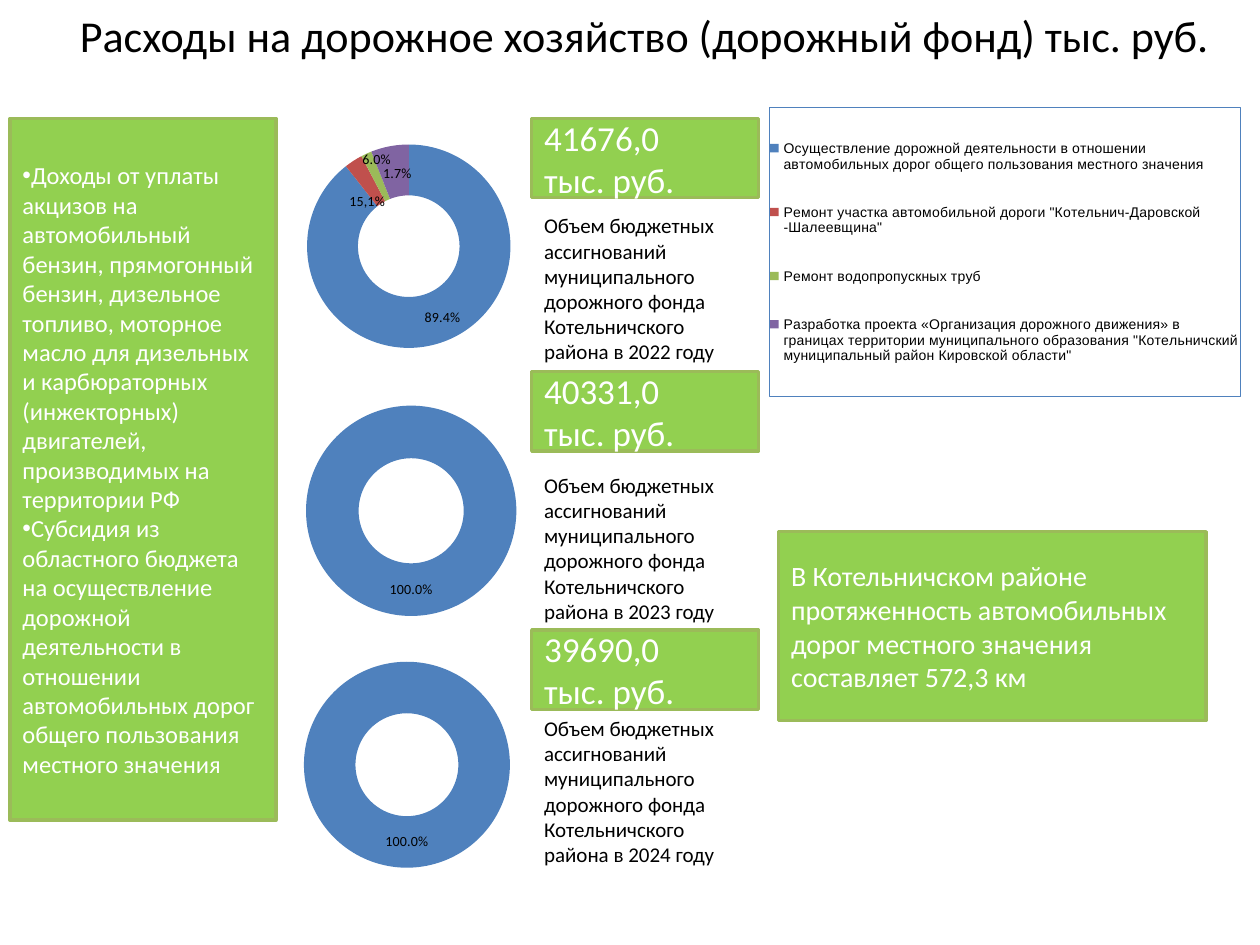
from lxml.etree import SubElement
from pptx import Presentation
from pptx.chart.data import CategoryChartData
from pptx.dml.color import RGBColor
from pptx.enum.chart import XL_CHART_TYPE, XL_LEGEND_POSITION
from pptx.enum.shapes import MSO_SHAPE
from pptx.enum.text import MSO_ANCHOR, PP_ALIGN
from pptx.oxml import parse_xml
from pptx.oxml.ns import nsdecls, qn
from pptx.util import Inches, Pt

BLACK = RGBColor(0x00, 0x00, 0x00)
WHITE = RGBColor(0xFF, 0xFF, 0xFF)
LIME = RGBColor(0x92, 0xD0, 0x50)
OLIVE = RGBColor(0x9B, 0xBB, 0x59)
BLUE = RGBColor(0x4F, 0x81, 0xBD)
RED = RGBColor(0xC0, 0x50, 0x4D)
PURPLE = RGBColor(0x80, 0x64, 0xA2)
SLICE_COLORS = (BLUE, RED, OLIVE, PURPLE)

RING_AREA = (0.14, 0.13, 0.69, 0.74)
LABEL_SHIFTS = ((0.03, 0), (0, 0.07), (0.07, -0.01), (-0.06, -0.04))

TITLE = "Расходы на дорожное хозяйство (дорожный фонд) тыс. руб."
INCOME = (
    "Доходы от уплаты акцизов на автомобильный бензин, прямогонный бензин, "
    "дизельное топливо, моторное масло для дизельных и карбюраторных "
    "(инжекторных) двигателей, производимых на территории РФ",
    "Субсидия из областного бюджета на осуществление дорожной деятельности "
    "в отношении автомобильных дорог общего пользования местного значения",
)
ROAD_LENGTH = ("В Котельничском районе протяженность автомобильных дорог "
               "местного значения составляет 572,3 км")
EXPENSES = (
    "Осуществление дорожной деятельности в отношении автомобильных дорог "
    "общего пользования местного значения",
    'Ремонт участка автомобильной дороги "Котельнич-Даровской -Шалеевщина"',
    "Ремонт водопропускных труб",
    "Разработка проекта «Организация дорожного движения» в границах "
    'территории муниципального образования "Котельничский муниципальный '
    'район Кировской области"',
)
# year, amount, top of the amount box, top of the caption
YEARS = (
    (2022, "41676,0", 0.94, 1.64),
    (2023, "40331,0", 2.95, 3.7),
    (2024, "39690,0", 5, 5.63),
)


def manual_layout(area, inner=False):
    """Return a c:layout element for x, y and, if given, width and height."""
    target = '<c:layoutTarget val="inner"/>' if inner else ""
    modes = '<c:xMode val="edge"/><c:yMode val="edge"/>' if len(area) == 4 else ""
    sizes = "".join(f'<c:{name} val="{value}"/>' for name, value in zip("xywh", area))
    return parse_xml(f'<c:layout {nsdecls("c")}><c:manualLayout>{target}{modes}{sizes}'
                     "</c:manualLayout></c:layout>")


class SlideBuilder:
    def __init__(self, page, font="Calibri"):
        self.page = page
        self.font = font

    def add_lines(self, frame, lines, size, color, align=PP_ALIGN.LEFT, bullet=None):
        frame.word_wrap = True
        for number, line in enumerate(lines):
            para = frame.add_paragraph() if number else frame.paragraphs[0]
            para.alignment = align
            if bullet:
                properties = para._p.get_or_add_pPr()
                SubElement(properties, qn("a:buFont"), typeface="Arial")
                SubElement(properties, qn("a:buChar"), char=bullet)
            span = para.add_run()
            span.text = line
            span.font.size = Pt(size)
            span.font.name = self.font
            span.font.color.rgb = color

    def text(self, left, top, width, height, lines, size,
             align=PP_ALIGN.LEFT, anchor=MSO_ANCHOR.TOP):
        box = self.page.shapes.add_textbox(
            Inches(left), Inches(top), Inches(width), Inches(height))
        box.text_frame.vertical_anchor = anchor
        self.add_lines(box.text_frame, lines, size, BLACK, align)

    def panel(self, left, top, width, height, lines, size, bullet=None):
        box = self.page.shapes.add_shape(
            MSO_SHAPE.RECTANGLE, Inches(left), Inches(top), Inches(width), Inches(height))
        box.shadow.inherit = False
        box.fill.solid()
        box.fill.fore_color.rgb = LIME
        box.line.color.rgb = OLIVE
        box.line.width = Pt(2)
        box.text_frame.vertical_anchor = MSO_ANCHOR.MIDDLE
        self.add_lines(box.text_frame, lines, size, WHITE, bullet=bullet)

    def ring(self, left, top, width, height, categories, values, area=RING_AREA):
        data = CategoryChartData(number_format="0.0%")
        data.categories = categories
        data.add_series("Series 1", values)
        chart = self.page.shapes.add_chart(
            XL_CHART_TYPE.DOUGHNUT, Inches(left), Inches(top),
            Inches(width), Inches(height), data).chart
        chart.has_title = False
        chart.has_legend = False
        chart.font.size = Pt(18)
        chart.font.name = self.font
        chart.font.color.rgb = BLACK
        plot_area = chart._chartSpace.chart.plotArea
        for layout in plot_area.findall(qn("c:layout")):
            plot_area.remove(layout)
        plot_area.insert(0, manual_layout(area, inner=True))
        chart._chartSpace.chart.addnext(parse_xml(
            f'<c:spPr {nsdecls("c", "a")}><a:noFill/><a:ln><a:noFill/></a:ln></c:spPr>'))
        series = chart.plots[0].series[0]
        for index, color in zip(range(len(values)), SLICE_COLORS):
            fill = series.points[index].format.fill
            fill.solid()
            fill.fore_color.rgb = color
        return chart

    def style_labels(self, font):
        font.size = Pt(8)
        font.name = self.font
        font.color.rgb = BLACK

    def label(self, chart):
        labels = chart.plots[0].series[0].data_labels
        labels.show_value = True
        labels.number_format = "0.0%"
        labels.number_format_is_linked = False
        self.style_labels(labels.font)

    def shift_labels(self, chart, shifts, custom):
        """Move each point's label; custom maps a point to its own wording."""
        series = chart.plots[0].series[0]
        for index, shift in enumerate(shifts):
            label = series.points[index].data_label
            if index in custom:
                span = label.text_frame.paragraphs[0].add_run()
                span.text = custom[index]
                self.style_labels(span.font)
            else:
                self.style_labels(label.font)
            mark = series._element.xpath(f"c:dLbls/c:dLbl/c:idx[@val='{index}']")[0]
            mark.addnext(manual_layout(shift))

    def legend(self, chart):
        """Let a bordered legend fill the whole chart frame."""
        chart.has_legend = True
        legend = chart.legend
        legend.position = XL_LEGEND_POSITION.TOP
        legend.include_in_layout = True
        legend.font.size = Pt(8)
        legend.font.name = "Arial"
        element = legend._element
        for layout in element.findall(qn("c:layout")):
            element.remove(layout)
        element.find(qn("c:legendPos")).addnext(manual_layout((0, 0, 1, 1)))
        element.find(qn("c:overlay")).addnext(parse_xml(
            f'<c:spPr {nsdecls("c", "a")}><a:ln w="9525"><a:solidFill>'
            f'<a:srgbClr val="{BLUE}"/></a:solidFill></a:ln></c:spPr>'))


def main():
    deck = Presentation()
    deck.slide_width, deck.slide_height = Inches(10), Inches(7.5)
    builder = SlideBuilder(deck.slides.add_slide(deck.slide_layouts[6]))

    builder.label(builder.ring(2.09, 2.92, 2.42, 2.27, ["1"], [1]))
    builder.text(0.23, 0, 9.77, 0.56, [TITLE], 25.2, PP_ALIGN.CENTER, MSO_ANCHOR.MIDDLE)
    builder.label(builder.ring(2.01, 4.95, 2.37, 2.24, ["1"], [1], (0.17, 0.13, 0.69, 0.74)))

    for year, amount, amount_top, caption_top in YEARS:
        builder.panel(4.22, amount_top, 1.8, 0.63, [amount, "тыс. руб."], 20)
        caption = ("Объем бюджетных ассигнований муниципального дорожного фонда "
                   f"Котельничского района в {year} году")
        builder.text(4.22, caption_top, 1.8, 1.31, [caption], 12)

    builder.panel(6.18, 4.22, 3.39, 1.5, [ROAD_LENGTH], 16)
    builder.panel(0.08, 0.94, 2.11, 5.57, INCOME, 14, bullet="•")

    builder.legend(builder.ring(6.1, 0.85, 3.75, 2.3, EXPENSES, [0] * len(EXPENSES),
                                (0.04, 0.12, 0.22, 0.4)))
    shares = builder.ring(2.11, 0.86, 2.34, 2.19, ["1", "2", "3", "4"],
                          [0.894, 0.029, 0.017, 0.06])
    builder.label(shares)
    builder.shift_labels(shares, LABEL_SHIFTS, {1: "15,1%"})

    deck.save("out.pptx")


if __name__ == "__main__":
    main()
